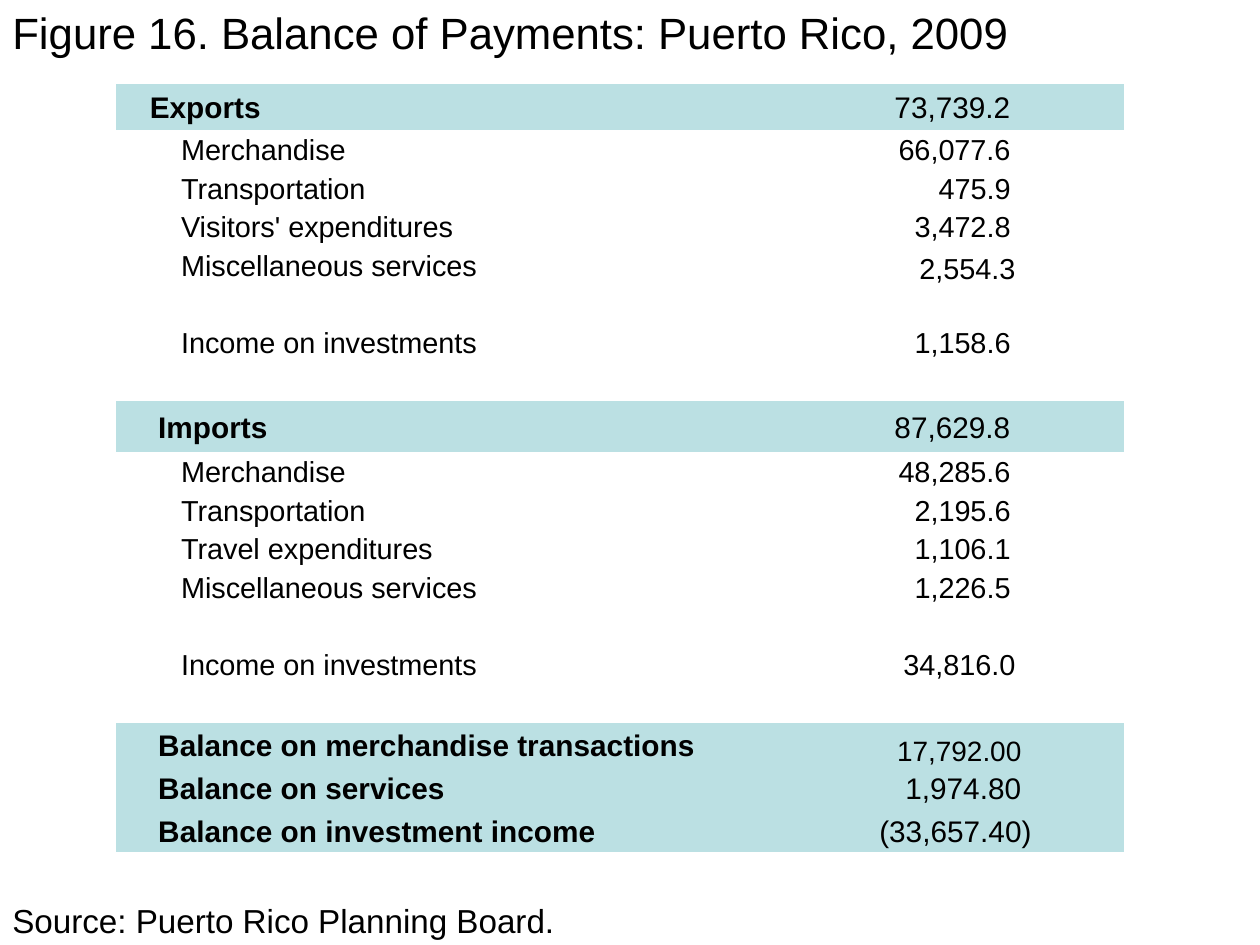
from dataclasses import dataclass

from pptx import Presentation
from pptx.dml.color import RGBColor
from pptx.enum.text import MSO_ANCHOR, PP_ALIGN
from pptx.util import Cm, Pt


@dataclass(frozen=True)
class Theme:
    font: str = "Arial"
    ink: RGBColor = RGBColor(0, 0, 0)
    band: RGBColor = RGBColor(0xBB, 0xE0, 0xE3)
    title: float = 25
    source: float = 19
    head: float = 17
    item: float = 16.5
    small: float = 16


@dataclass(frozen=True)
class Row:
    label: str = ""
    value: str = ""
    height: float = 0.78
    indent: float = 1.32
    inset: float = 2.28
    banded: bool = False
    value_size: float = 0
    value_anchor: MSO_ANCHOR = MSO_ANCHOR.MIDDLE


THEME = Theme()
NO_STYLE = "{2D5ABB26-0587-4C30-8999-92F81FD0307C}"
GAP = Row()
ROWS = [
    Row("Exports", "73,739.2", 0.93, 0.69, banded=True),
    Row("Merchandise", "66,077.6"),
    Row("Transportation", "475.9"),
    Row("Visitors' expenditures", "3,472.8"),
    Row("Miscellaneous services", "2,554.3", inset=2.18, value_anchor=MSO_ANCHOR.BOTTOM),
    GAP,
    Row("Income on investments", "1,158.6"),
    GAP,
    Row("Imports", "87,629.8", 1.03, 0.86, banded=True),
    Row("Merchandise", "48,285.6"),
    Row("Transportation", "2,195.6"),
    Row("Travel expenditures", "1,106.1"),
    Row("Miscellaneous services", "1,226.5"),
    GAP,
    Row("Income on investments", "34,816.0", inset=2.18),
    GAP,
    Row("Balance on merchandise transactions", "17,792.00", 0.88, 0.86, 2.06, True,
        THEME.small, MSO_ANCHOR.BOTTOM),
    Row("Balance on services", "1,974.80", 0.86, 0.86, 2.06, True),
    Row("Balance on investment income", "(33,657.40)", 0.86, 0.86, 1.85, True),
    GAP,
]


def style_paragraph(p, size, bold=False, align=PP_ALIGN.LEFT):
    p.alignment = align
    p.font.name = THEME.font
    p.font.size = Pt(size)
    p.font.bold = bold
    p.font.color.rgb = THEME.ink


def add_caption(slide, box, text, size):
    tf = slide.shapes.add_textbox(*map(Cm, box)).text_frame
    tf.word_wrap = True
    p = tf.paragraphs[0]
    p.text = text
    style_paragraph(p, size)


def fill_cell(cell, text, size, banded, bold, align, anchor, left, right):
    cell.margin_left, cell.margin_right = Cm(left), Cm(right)
    cell.margin_top, cell.margin_bottom = Cm(0.03), 0
    cell.vertical_anchor = anchor
    if banded:
        cell.fill.solid()
        cell.fill.fore_color.rgb = THEME.band
    else:
        cell.fill.background()
    p = cell.text_frame.paragraphs[0]
    p.text = text
    style_paragraph(p, size, bold, align)


def add_balance_table(slide, box, rows):
    left, top, width = box
    height = sum(row.height for row in rows)
    frame = slide.shapes.add_table(len(rows), 2, Cm(left), Cm(top), Cm(width), Cm(height))
    table = frame.table
    table.first_row = table.horz_banding = False
    table._tbl.tblPr.find("{*}tableStyleId").text = NO_STYLE
    for column, share in zip(table.columns, (2 / 3, 1 / 3)):
        column.width = Cm(width * share)
    for i, row in enumerate(rows):
        table.rows[i].height = Cm(row.height)
        size = THEME.head if row.banded else THEME.item
        fill_cell(table.cell(i, 0), row.label, size, row.banded, row.banded,
                  PP_ALIGN.LEFT, MSO_ANCHOR.MIDDLE, row.indent, 0.03)
        fill_cell(table.cell(i, 1), row.value, row.value_size or size, row.banded, False,
                  PP_ALIGN.RIGHT, row.value_anchor, 0.03, row.inset)


def main():
    prs = Presentation()
    prs.slide_width, prs.slide_height = Cm(25.4), Cm(19.05)
    s = prs.slides.add_slide(prs.slide_layouts[6])
    add_balance_table(s, (2.33, 1.7, 20.32), ROWS)
    add_caption(s, (0, 0, 25.4, 1.37), "Figure 16. Balance of Payments: Puerto Rico, 2009", THEME.title)
    add_caption(s, (0, 18.03, 15.04, 1.02), "Source: Puerto Rico Planning Board.", THEME.source)
    prs.save("out.pptx")


if __name__ == "__main__":
    main()
